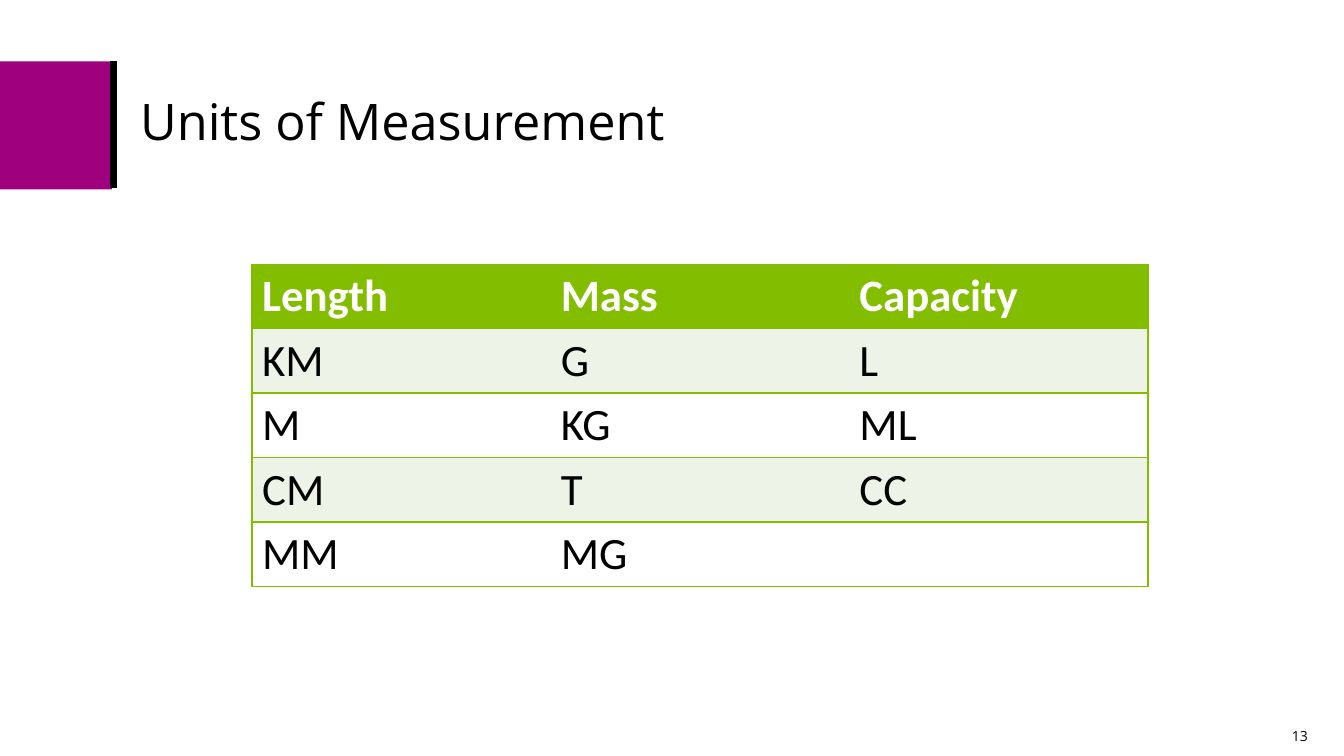
from lxml.etree import SubElement
from pptx import Presentation
from pptx.dml.color import RGBColor
from pptx.enum.shapes import MSO_CONNECTOR as CONN, MSO_SHAPE as SHAPE
from pptx.enum.text import MSO_ANCHOR as ANCHOR, PP_ALIGN as ALIGN
from pptx.oxml.ns import qn
from pptx.util import Inches, Pt

TITLE = "Units of Measurement"
PAGE = "13"
UNITS = [
    ("Length", "Mass", "Capacity"),
    ("KM", "G", "L"),
    ("M", "KG", "ML"),
    ("CM", "T", "CC"),
    ("MM", "MG", ""),
]
PURPLE, GREEN, PALE, WHITE, BLACK = "9E007E", "83BD00", "EDF4E7", "FFFFFF", "000000"
SLIDE_W, SLIDE_H = 13.33, 7.5
TABLE_X, TABLE_Y = 2.5, 2.62
COL_W, ROW_H = SLIDE_W * 2 / 9, 0.64


def rgb(value):
    return RGBColor.from_string(value)


def box(*lengths):
    return [Inches(v) for v in lengths]


def style(p, size, font, color, bold=False):
    for r in p.runs:
        r.font.size, r.font.name, r.font.bold = Pt(size), font, bold
        r.font.color.rgb = rgb(color)


def border(cell, edge, color):
    ln = SubElement(cell._tc.get_or_add_tcPr(), qn("a:ln" + edge), w=str(Pt(1)))
    if color:
        fill = SubElement(ln, qn("a:solidFill"))
        SubElement(fill, qn("a:srgbClr"), val=color)
    else:
        SubElement(ln, qn("a:noFill"))


def add_band(s):
    sp = s.shapes.add_shape(SHAPE.RECTANGLE, *box(0, 0.61, 1.11, 1.27))
    sp.shadow.inherit = False
    sp.fill.solid()
    sp.fill.fore_color.rgb = rgb(PURPLE)
    sp.line.fill.background()
    bar = s.shapes.add_connector(CONN.STRAIGHT, *box(1.13, 0.61, 1.13, 1.87))
    bar.line.color.rgb = rgb(BLACK)
    bar.line.width = Pt(5)
    SubElement(bar._element.spPr, qn("a:effectLst"))


def add_title(s):
    sp = s.shapes.title
    sp.left, sp.top, sp.width, sp.height = box(1.29, 0.62, 10.9, 1.22)
    tf = sp.text_frame
    tf.text = TITLE
    tf.word_wrap = True
    tf.vertical_anchor = ANCHOR.MIDDLE
    p = tf.paragraphs[0]
    p.alignment, p.line_spacing = ALIGN.LEFT, 0.9
    style(p, 36, "Open Sans", BLACK)


def add_page_number(s):
    tf = s.shapes.add_textbox(*box(10.07, 7.1, 3, 0.4)).text_frame
    tf.text = PAGE
    tf.word_wrap = True
    tf.vertical_anchor = ANCHOR.MIDDLE
    p = tf.paragraphs[0]
    p.alignment = ALIGN.RIGHT
    style(p, 10, "Open Sans", BLACK)


def add_units(s):
    rows, cols = len(UNITS), len(UNITS[0])
    size = box(TABLE_X, TABLE_Y, COL_W * cols, ROW_H * rows)
    table = s.shapes.add_table(rows, cols, *size).table
    table.horz_banding = False
    for i, row in enumerate(UNITS):
        for j, text in enumerate(row):
            cell = table.cell(i, j)
            cell.text = text
            style(cell.text_frame.paragraphs[0], 32, "Calibri",
                  BLACK if i else WHITE, bold=i == 0)
            border(cell, "L", GREEN if j == 0 else None)
            border(cell, "R", GREEN if j == cols - 1 else None)
            border(cell, "T", GREEN)
            border(cell, "B", GREEN)
            cell.fill.solid()
            cell.fill.fore_color.rgb = rgb(GREEN if i == 0 else PALE if i % 2 else WHITE)


def main():
    prs = Presentation()
    prs.slide_width, prs.slide_height = box(SLIDE_W, SLIDE_H)
    s = prs.slides.add_slide(prs.slide_layouts[5])
    add_band(s)
    add_title(s)
    add_page_number(s)
    add_units(s)
    prs.save("out.pptx")


if __name__ == "__main__":
    main()
